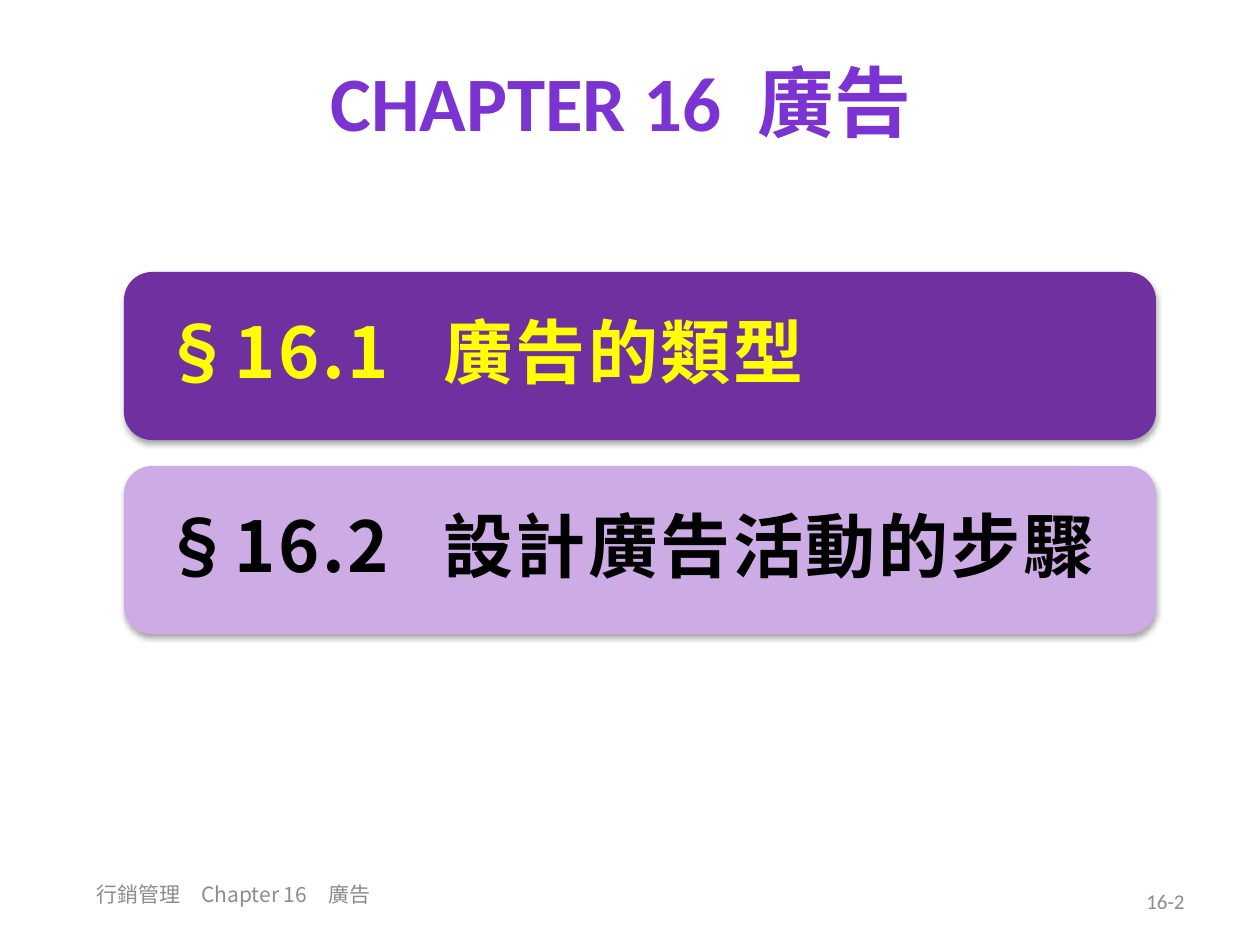
"""Build the chapter opening slide with its two section banners."""
from dataclasses import dataclass

from lxml.etree import SubElement
from pptx import Presentation
from pptx.dml.color import RGBColor
from pptx.enum.shapes import MSO_SHAPE
from pptx.enum.text import MSO_ANCHOR, PP_ALIGN
from pptx.oxml.ns import qn
from pptx.util import Emu, Pt

COLORS = {
    "title": "7B34D2",
    "active": "7030A0",
    "active_text": "FFFF00",
    "waiting": "CDACE6",
    "waiting_text": "000000",
    "footer": "8C8C8C",
    "shadow": "000000",
}
LATIN_FONT = "Calibri"
CHINESE_FONT = "Noto Sans CJK SC"
BANNER_LEFT, BANNER_TOP, BANNER_WIDTH, BANNER_HEIGHT = 124, 272, 1032, 168
BANNER_STEP = 194
BANNER_INSET = 30
HEADING_TAB = 281


@dataclass
class Section:
    number: str
    heading: str
    fill: str
    color: str


@dataclass
class Label:
    text: str
    left: int
    top: int
    width: int
    font: str
    alignment: PP_ALIGN


SECTIONS = [
    Section("§16.1", "廣告的類型", "active", "active_text"),
    Section("§16.2", "設計廣告活動的步驟", "waiting", "waiting_text"),
]
LABELS = [
    Label("行銷管理\u3000Chapter 16\u3000廣告".replace("\u3000", "　"), 84, 869, 307, CHINESE_FONT, PP_ALIGN.LEFT),
    Label("16-2", 903, 876, 294, LATIN_FONT, PP_ALIGN.RIGHT),
]


def px(value: int) -> Emu:
    return Emu(round(value * 914400 / 126))


def format_text(paragraph, size: int, color: str, font: str, bold: bool = False) -> None:
    for run in paragraph.runs:
        run.font.size = Pt(size)
        run.font.bold = bold
        run.font.name = font
        run.font.color.rgb = RGBColor.from_string(COLORS[color])
        SubElement(run.font._element, qn("a:ea")).set("typeface", CHINESE_FONT)


def add_shadow(shape) -> None:
    shape.shadow.inherit = False
    effects = shape._element.spPr.find(qn("a:effectLst"))
    shadow = SubElement(effects, qn("a:outerShdw"), blurRad=str(Pt(3.1)),
                        dist=str(Pt(1.8)), dir="5400000", rotWithShape="0")
    color = SubElement(shadow, qn("a:srgbClr"), val=COLORS["shadow"])
    SubElement(color, qn("a:alpha"), val="35000")


def add_title(slide) -> None:
    title = slide.shapes.title
    title.left, title.top, title.width, title.height = px(54), px(26), px(1134), px(150)
    title.text_frame.text = "CHAPTER 16  廣告"
    title.text_frame.vertical_anchor = MSO_ANCHOR.MIDDLE
    paragraph = title.text_frame.paragraphs[0]
    paragraph.alignment = PP_ALIGN.CENTER
    format_text(paragraph, 44, "title", LATIN_FONT, bold=True)


def add_banner(slide, section: Section, top: int) -> None:
    shape = slide.shapes.add_shape(MSO_SHAPE.ROUNDED_RECTANGLE, px(BANNER_LEFT), px(top),
                                   px(BANNER_WIDTH), px(BANNER_HEIGHT))
    shape.fill.solid()
    shape.fill.fore_color.rgb = RGBColor.from_string(COLORS[section.fill])
    shape.line.fill.background()
    add_shadow(shape)
    frame = shape.text_frame
    frame.word_wrap = True
    frame.vertical_anchor = MSO_ANCHOR.MIDDLE
    frame.margin_left = frame.margin_right = px(BANNER_INSET)
    frame.text = f"{section.number}\t{section.heading}"
    paragraph = frame.paragraphs[0]
    paragraph.alignment = PP_ALIGN.LEFT
    paragraph.line_spacing = 0.9
    paragraph.space_after = Pt(4)
    tabs = SubElement(paragraph._p.get_or_add_pPr(), qn("a:tabLst"))
    SubElement(tabs, qn("a:tab"), pos=str(px(HEADING_TAB)), algn="l")
    format_text(paragraph, 40, section.color, CHINESE_FONT, bold=True)
    for run in paragraph.runs:
        run.font._element.set("spc", "150")


def add_label(slide, label: Label) -> None:
    box = slide.shapes.add_textbox(px(label.left), px(label.top), px(label.width), px(50))
    frame = box.text_frame
    frame.word_wrap = True
    frame.vertical_anchor = MSO_ANCHOR.MIDDLE
    frame.text = label.text
    paragraph = frame.paragraphs[0]
    paragraph.alignment = label.alignment
    format_text(paragraph, 12, "footer", label.font)


def main() -> None:
    presentation = Presentation()
    presentation.slide_width, presentation.slide_height = px(1260), px(945)
    slide = presentation.slides.add_slide(presentation.slide_layouts[5])
    add_title(slide)
    for index, section in enumerate(SECTIONS):
        add_banner(slide, section, BANNER_TOP + index * BANNER_STEP)
    for label in LABELS:
        add_label(slide, label)
    presentation.save("out.pptx")


if __name__ == "__main__":
    main()
